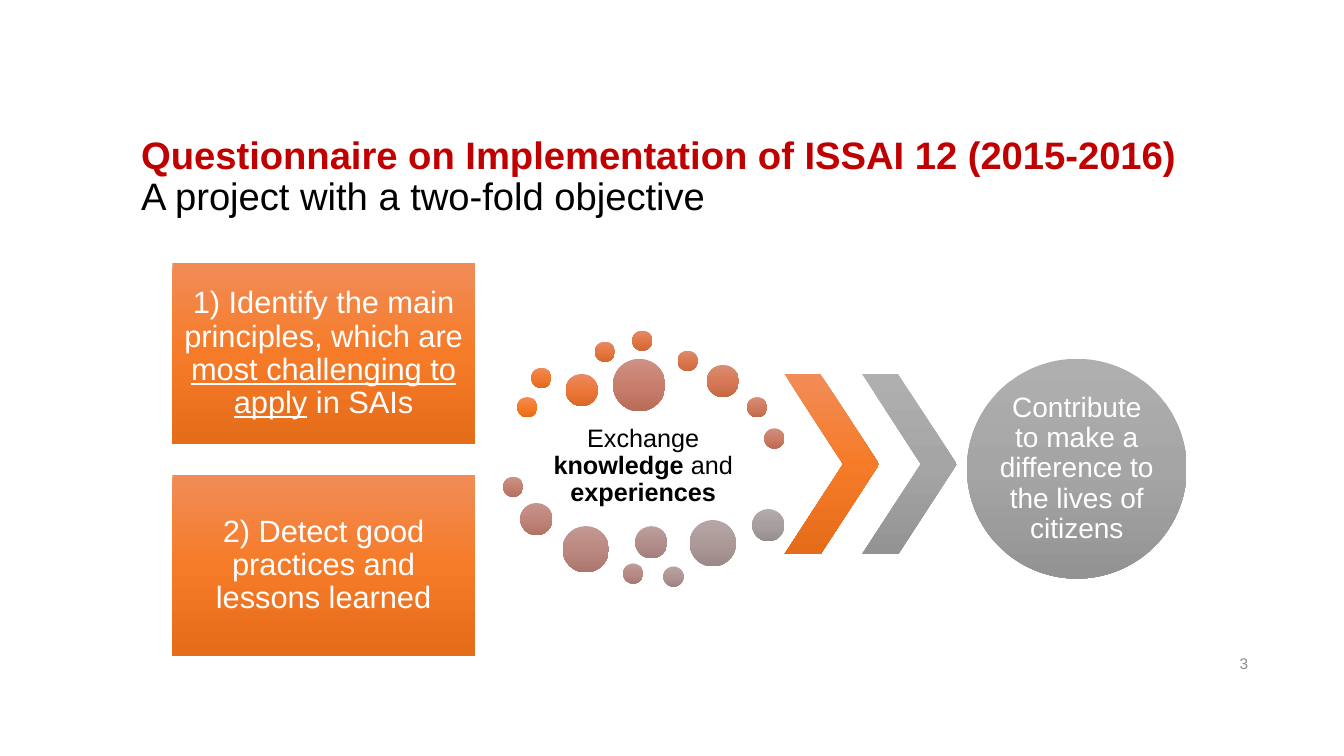
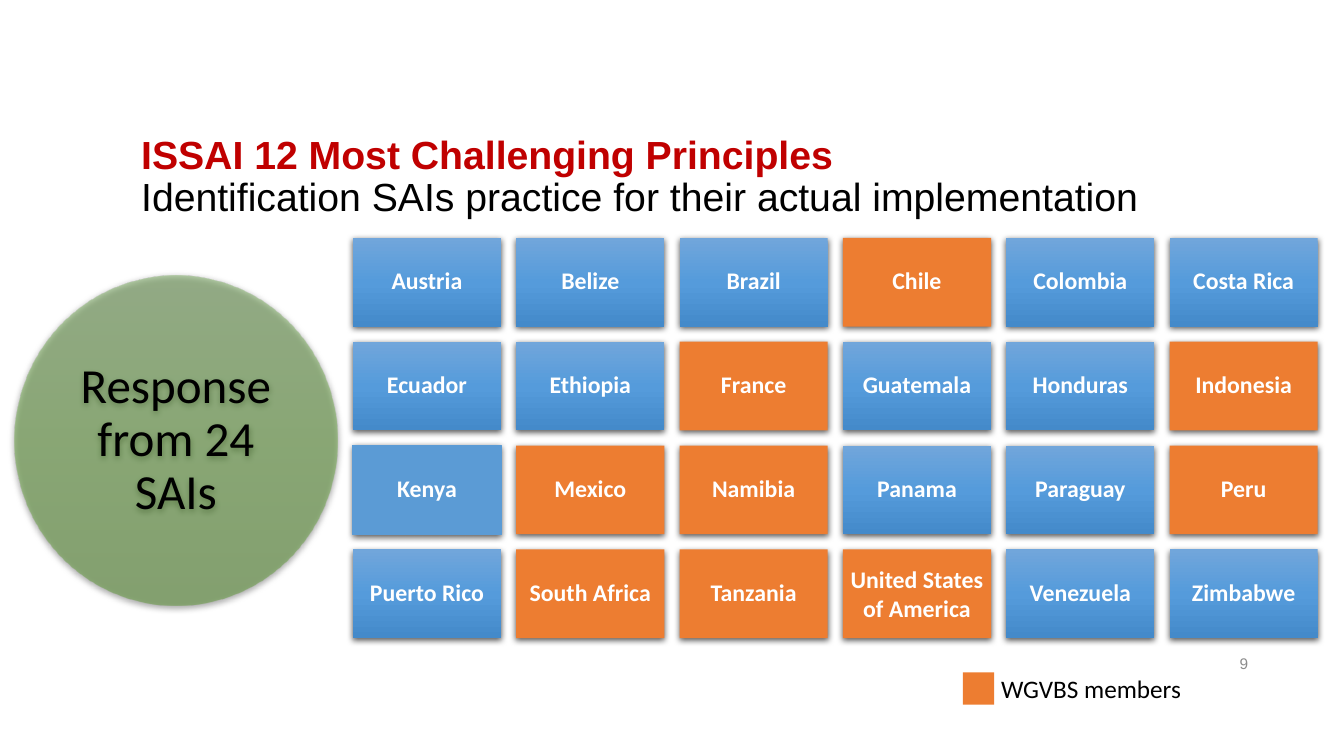
from colorsys import hls_to_rgb, rgb_to_hls
from copy import deepcopy

from lxml.etree import SubElement
from pptx import Presentation
from pptx.dml.color import RGBColor as Rgb
from pptx.enum.shapes import MSO_SHAPE as Shape
from pptx.enum.text import MSO_ANCHOR as Anchor, MSO_AUTO_SIZE as AutoSize, PP_ALIGN as Align
from pptx.oxml.ns import qn
from pptx.util import Pt

PX = 9144  # EMU per px, 100 px to the inch

COLORS = {
    "red": "C00000", "black": "000000", "white": "FFFFFF", "number": "8C8C8C",
    "member": "ED7D31", "plain blue": "5B9BD5",
}
GRADIENTS = {
    "orange": ("F18C57", "F67B28", "E56C19"),
    "grey": ("AFAFAF", "A5A5A5", "939393"),
    "blue": ("71A6DB", "559BDB", "448ACA"),
    "green": ("78A95E", "65A23C", "599431"),
}
# left, top, diameter, from the orange end to the grey end
DOTS = [
    (513, 394, 20), (527, 365, 20), (561, 371, 32), (590, 339, 20), (627, 328, 20),
    (672, 348, 20), (701, 362, 32), (741, 394, 20), (758, 425, 20), (608, 356, 52),
    (499, 473, 20), (516, 499, 32), (558, 522, 46), (618, 559, 20), (630, 522, 32),
    (658, 562, 20), (684, 516, 46), (746, 505, 32),
]
COUNTRIES = [
    ["Austria", "Belize", "Brazil", "Chile", "Colombia", "Costa Rica"],
    ["Ecuador", "Ethiopia", "France", "Guatemala", "Honduras", "Indonesia"],
    ["Kenya", "Mexico", "Namibia", "Panama", "Paraguay", "Peru"],
    ["Puerto Rico", "South Africa", "Tanzania", "United States of America",
     "Venezuela", "Zimbabwe"],
]
MEMBERS = {"Chile", "France", "Indonesia", "Mexico", "Namibia", "Peru",
           "South Africa", "Tanzania", "United States of America"}


def blend(start, end, share):
    """Mix two hex colours by hue, lightness and saturation."""
    first, last = (rgb_to_hls(*(part / 255 for part in Rgb.from_string(color)))
                   for color in (start, end))
    mixed = hls_to_rgb(*(a + (b - a) * share for a, b in zip(first, last)))
    return str(Rgb(*(round(part * 255) for part in mixed)))


class Deck:
    def __init__(self):
        self.deck = Presentation()
        self.deck.slide_width, self.deck.slide_height = 1333 * PX, 750 * PX
        self.page = None

    def new_page(self, number, heading, subtitle, size):
        self.page = self.deck.slides.add_slide(self.deck.slide_layouts[5])
        title = self.page.shapes.title
        self.place(title, 130, 121, 1145, 111)
        self.fill_text(title, [(heading, {"color": "red", "bold": True}), ("\n", {}),
                               (subtitle, {})], align=Align.LEFT, inset=(10, 5), size=size)
        self.text([(str(number), {})], 948, 639, 300, 40, align=Align.RIGHT,
                  inset=(10, 5), size=11, color="number")

    def place(self, shape, *box):
        for name, value in zip(("left", "top", "width", "height"), box):
            setattr(shape, name, value * PX)

    def fill_text(self, shape, runs, align=Align.CENTER, inset=(0, 0), spacing=0.9, **style):
        frame = shape.text_frame
        side, end = (value * PX for value in inset)
        layout = {"word_wrap": True, "auto_size": AutoSize.NONE,
                  "vertical_anchor": Anchor.MIDDLE, "margin_left": side,
                  "margin_right": side, "margin_top": end, "margin_bottom": end}
        for name, value in layout.items():
            setattr(frame, name, value)
        para = frame.paragraphs[0]
        para.alignment, para.line_spacing = align, spacing
        for text, changes in runs:
            if text == "\n":
                para.add_line_break()
                continue
            span = para.add_run()
            span.text = text
            look = {"name": "Arial", "bold": False, "color": "black", **style, **changes}
            span.font.color.rgb = Rgb.from_string(COLORS[look.pop("color")])
            look["size"] = Pt(look["size"])
            for name, value in look.items():
                setattr(span.font, name, value)

    def text(self, runs, *box, **style):
        self.fill_text(self.page.shapes.add_textbox(*(value * PX for value in box)),
                       runs, **style)

    def shape(self, kind, *box, fill, shadow=False, alpha=None):
        """Add a shape; fill is one hex colour or three gradient colours."""
        shape = self.page.shapes.add_shape(kind, *(value * PX for value in box))
        shape.shadow.inherit = False
        shape.line.fill.background()
        if isinstance(fill, str):
            shape.fill.solid()
            shape.fill.fore_color.rgb = Rgb.from_string(fill)
        else:
            self.gradient(shape, fill, alpha)
        if shadow:
            self.shadow(shape)
        return shape

    def gradient(self, shape, colors, alpha):
        shape.fill.gradient()
        shape.fill.gradient_angle = 270
        stops = shape._element.spPr.find(".//" + qn("a:gsLst"))
        stops.append(deepcopy(stops[-1]))
        for index, (stop, color) in enumerate(zip(shape.fill.gradient_stops, colors)):
            stop.position = index / 2
            stop.color.rgb = Rgb.from_string(color)
        if alpha:
            for color in stops.iter(qn("a:srgbClr")):
                SubElement(color, qn("a:alpha"), val=str(alpha * 1000))

    def shadow(self, shape):
        effects = shape._element.spPr.find(qn("a:effectLst"))
        outer = SubElement(effects, qn("a:outerShdw"), blurRad=str(Pt(4.5)),
                           dist=str(Pt(1.5)), dir="5400000", algn="ctr", rotWithShape="0")
        color = SubElement(outer, qn("a:srgbClr"), val=COLORS["black"])
        SubElement(color, qn("a:alpha"), val="63000")


def objective_page(deck):
    deck.new_page(3, "Questionnaire on Implementation of ISSAI 12 (2015-2016)",
                  "A project with a two-fold objective", 27.3)
    # Objectives
    objectives = [
        [("1) Identify the main principles, which are ", {}),
         ("most challenging to apply", {"underline": True}), (" in SAIs", {})],
        [("2) Detect good practices and lessons learned", {})],
    ]
    for index, runs in enumerate(objectives):
        box = deck.shape(Shape.RECTANGLE, 171, 261 + 210 * index, 300, 180,
                         fill=GRADIENTS["orange"])
        deck.fill_text(box, runs, inset=(9, 9), size=22, color="white")
    # Ring of dots
    deck.text([("Exchange ", {}), ("knowledge", {"bold": True}), (" and ", {}),
               ("experiences", {"bold": True})], 528, 416, 220, 93, inset=(3, 3), size=18)
    for index, (left, top, size) in enumerate(DOTS):
        colors = [blend(start, end, index / len(DOTS))
                  for start, end in zip(GRADIENTS["orange"], GRADIENTS["grey"])]
        deck.shape(Shape.OVAL, left, top, size, size, fill=colors)
    # Chevrons and result
    for left, name in ((778, "orange"), (855, "grey")):
        chevron = deck.shape(Shape.CHEVRON, left, 371, 94, 179, fill=GRADIENTS[name])
        chevron.adjustments[0] = 0.62
    result = deck.shape(Shape.OVAL, 959, 356, 218, 218, fill=GRADIENTS["grey"])
    deck.fill_text(result, [("Contribute to make a difference to the lives of citizens", {})],
                   size=20, color="white")


def response_page(deck):
    deck.new_page(9, "ISSAI 12 Most Challenging Principles",
                  "Identification SAIs practice for their actual implementation", 28)
    # Country grid
    for row, names in enumerate(COUNTRIES):
        for column, name in enumerate(names):
            fill = COLORS["member"] if name in MEMBERS else GRADIENTS["blue"]
            if name == "Kenya":
                fill = COLORS["plain blue"]
            tile = deck.shape(Shape.RECTANGLE, 350 + 162 * column, 236 + 103 * row,
                              147, 88, fill=fill, shadow=True)
            if name == "Kenya":
                tile.line.color.rgb = Rgb.from_string(fill)
                tile.line.width = Pt(0.75)
            deck.fill_text(tile, [(name, {})], inset=(7, 7), size=17, name="Calibri",
                           bold=True, color="white",
                           spacing=1.0 if name.startswith("United") else 0.9)
    # Legend
    deck.text([("WGVBS members", {})], 983, 663, 235, 40, align=Align.LEFT,
              inset=(10, 5), spacing=1.0, size=18, name="Calibri")
    deck.shape(Shape.RECTANGLE, 955, 667, 31, 32, fill=COLORS["member"])
    # Response count
    count = deck.shape(Shape.OVAL, 14, 273, 321, 328, fill=GRADIENTS["green"],
                       shadow=True, alpha=50)
    deck.fill_text(count, [("Response from 24 SAIs", {})], inset=(18, 5), size=35,
                   name="Calibri")


def main():
    deck = Deck()
    objective_page(deck)
    response_page(deck)
    deck.deck.save("out.pptx")


if __name__ == "__main__":
    main()
